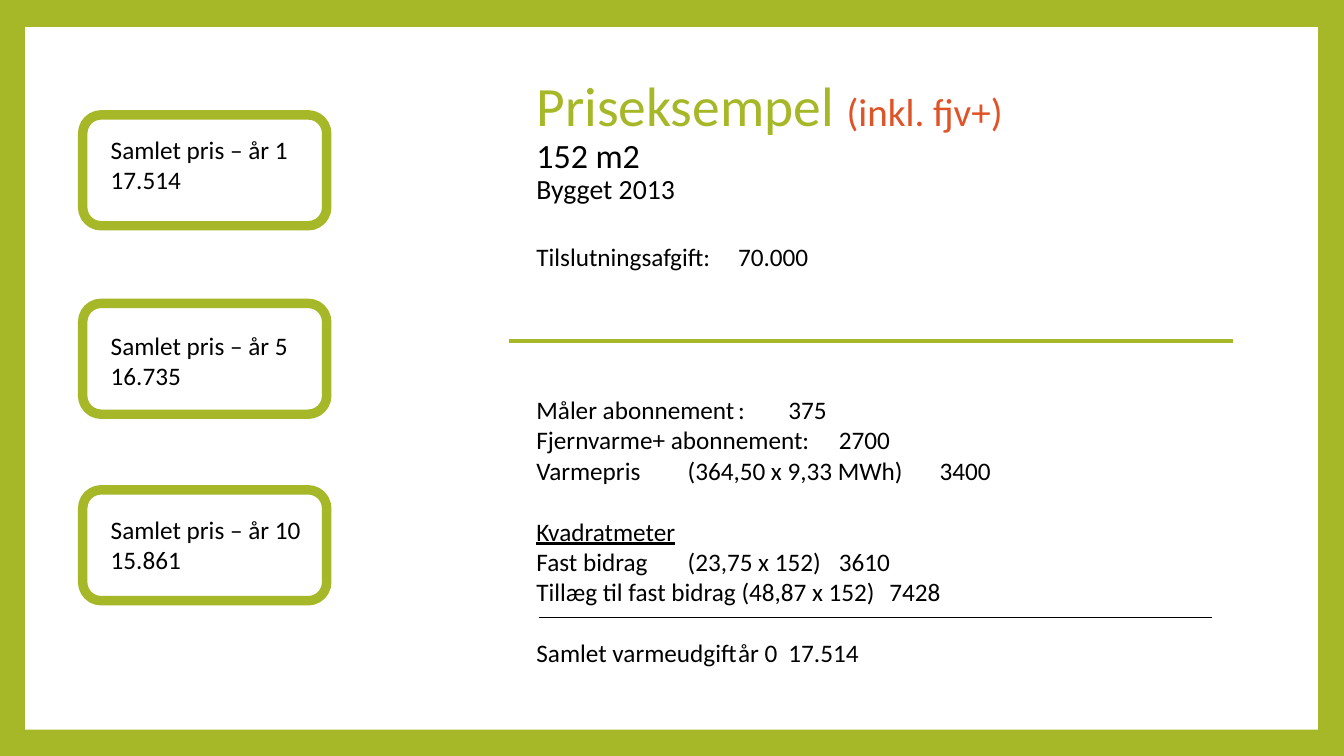
"""Build a one-slide price example for district heating."""
from dataclasses import dataclass

from lxml import etree
from pptx import Presentation
from pptx import util as u
from pptx.dml import color
from pptx.enum import shapes, text
from pptx.oxml import ns


@dataclass(frozen=True)
class Theme:
    """Colours, font and type sizes."""
    green: str = "A6B727"
    orange: str = "DF5327"
    black: str = "000000"
    white: str = "FFFFFF"
    font: str = "Calibri"
    title: float = 39.6
    note: float = 27.9
    area: float = 24.3
    built: float = 19.8
    body: float = 18
    line: float = 22


T = Theme()
AMOUNT, TOTAL = 6.0, 5.5
TITLE = [
    ("Priseksempel ", T.title, T.green, False),
    ("(inkl. fjv+)", T.note, T.orange, True),
    ("152 m2", T.area, T.black, True),
    ("Bygget 2013", T.built, T.black, False),
]
PRICES = [
    ("Tilslutningsafgift:\t70.000", 0, [AMOUNT], False),
    ("Måler abonnement\t:\t375", 4, [1.98, AMOUNT], False),
    ("Fjernvarme+ abonnement:\t2700", 0, [AMOUNT], False),
    ("Varmepris\t(364,50 x 9,33 MWh)\t3400", 0, [1.2, AMOUNT], False),
    ("Kvadratmeter", 1, [], True),
    ("Fast bidrag\t(23,75 x 152)\t3610", 0, [1.27, AMOUNT], False),
    ("Tillæg til fast bidrag (48,87 x 152)\t7428", 0, [AMOUNT], False),
    ("Samlet varmeudgift\tår 0\t17.514", 1, [2.1, TOTAL], False),
]
TOTALS = [
    ("Samlet pris – år 1\v17.514", 1.14, 1.28),
    ("Samlet pris – år 5\v16.735", 3.01, 3.23),
    ("Samlet pris – år 10\v15.861", 4.86, 5.05),
]


def rgb(value):
    """Return a colour from its hex value."""
    return color.RGBColor.from_string(value)


def apply(obj, formats):
    """Set each attribute in formats on obj."""
    for name, value in formats.items():
        setattr(obj, name, value)


def style(font, size=T.body, hue=T.black, underline=False):
    """Format a font."""
    apply(font, {"name": T.font, "size": u.Pt(size), "underline": underline})
    font.color.rgb = rgb(hue)


def place(sp, x, y, w, h):
    """Move and size a shape, in inches."""
    apply(sp, {"left": u.Inches(x), "top": u.Inches(y),
               "width": u.Inches(w), "height": u.Inches(h)})


def set_tabs(p, stops):
    """Remove the bullet and set tab stops, in inches."""
    pPr = p._p.get_or_add_pPr()
    apply_indent = {"marL": "0", "indent": "0"}
    for name, value in apply_indent.items():
        pPr.set(name, value)
    etree.SubElement(pPr, ns.qn("a:buNone"))
    tabs = etree.SubElement(pPr, ns.qn("a:tabLst"))
    for stop in stops:
        etree.SubElement(tabs, ns.qn("a:tab"), pos=str(u.Inches(stop)), algn="l")


def add_panel(s):
    """Add the white panel behind the placeholders."""
    sp = s.shapes.add_shape(shapes.MSO_SHAPE.RECTANGLE, u.Inches(0.25),
                            u.Inches(0.27), u.Inches(12.82), u.Inches(6.97))
    sp.shadow.inherit = False
    sp.fill.solid()
    sp.fill.fore_color.rgb = rgb(T.white)
    sp.line.fill.background()
    s.shapes.title._element.addprevious(sp._element)


def fill_title(sp):
    """Write the heading in its four styles."""
    place(sp, 5.22, 0.67, 7.32, 1.48)
    tf = sp.text_frame
    apply(tf, {"word_wrap": True, "auto_size": text.MSO_AUTO_SIZE.NONE,
               "vertical_anchor": text.MSO_ANCHOR.MIDDLE})
    p = tf.paragraphs[0]
    apply(p, {"alignment": text.PP_ALIGN.LEFT, "line_spacing": 0.9})
    for words, size, hue, ends_line in TITLE:
        r = p.add_run()
        r.text = words
        style(r.font, size, hue)
        if ends_line:
            p.add_line_break()


def fill_prices(sp):
    """Write the price lines with amounts on tab stops."""
    place(sp, 5.22, 2.34, 7.32, 4.64)
    tf = sp.text_frame
    apply(tf, {"word_wrap": True, "auto_size": text.MSO_AUTO_SIZE.NONE,
               "vertical_anchor": text.MSO_ANCHOR.TOP})
    for i, (words, gap, stops, underline) in enumerate(PRICES):
        p = tf.add_paragraph() if i else tf.paragraphs[0]
        set_tabs(p, stops)
        apply(p, {"space_before": u.Pt(gap * T.line), "line_spacing": 1.0})
        r = p.add_run()
        r.text = words
        style(r.font, underline=underline)


def add_rule(s, x1, x2, y, hue, width):
    """Add a horizontal line."""
    ln = s.shapes.add_connector(shapes.MSO_CONNECTOR.STRAIGHT, u.Inches(x1),
                                u.Inches(y), u.Inches(x2), u.Inches(y))
    ln.line.color.rgb = rgb(hue)
    ln.line.width = u.Pt(width)
    etree.SubElement(ln._element.spPr, ns.qn("a:effectLst"))


def add_total(s, words, frame_y, text_y):
    """Add a yearly total with its rounded frame."""
    tb = s.shapes.add_textbox(u.Inches(1), u.Inches(text_y), u.Inches(2.1), u.Inches(0.71))
    tf = tb.text_frame
    tf.word_wrap = False
    p = tf.paragraphs[0]
    p.text = words
    for r in p.runs:
        style(r.font)
    sp = s.shapes.add_shape(shapes.MSO_SHAPE.ROUNDED_RECTANGLE, u.Inches(0.82),
                            u.Inches(frame_y), u.Inches(2.42), u.Inches(1.1))
    sp.shadow.inherit = False
    sp.fill.background()
    sp.line.color.rgb = rgb(T.green)
    sp.line.width = u.Pt(6.75)


def main():
    """Build and save the slide."""
    prs = Presentation()
    apply(prs, {"slide_width": u.Inches(13.33), "slide_height": u.Inches(7.5)})
    s = prs.slides.add_slide(prs.slide_layouts[1])
    s.background.fill.solid()
    s.background.fill.fore_color.rgb = rgb(T.green)
    add_panel(s)
    fill_title(s.shapes.title)
    fill_prices(s.placeholders[1])
    for total in TOTALS:
        add_total(s, *total)
    add_rule(s, 5.05, 12.23, 3.38, T.green, 2.75)
    add_rule(s, 5.35, 12.02, 6.13, T.black, 0.79)
    prs.save("out.pptx")


if __name__ == "__main__":
    main()
